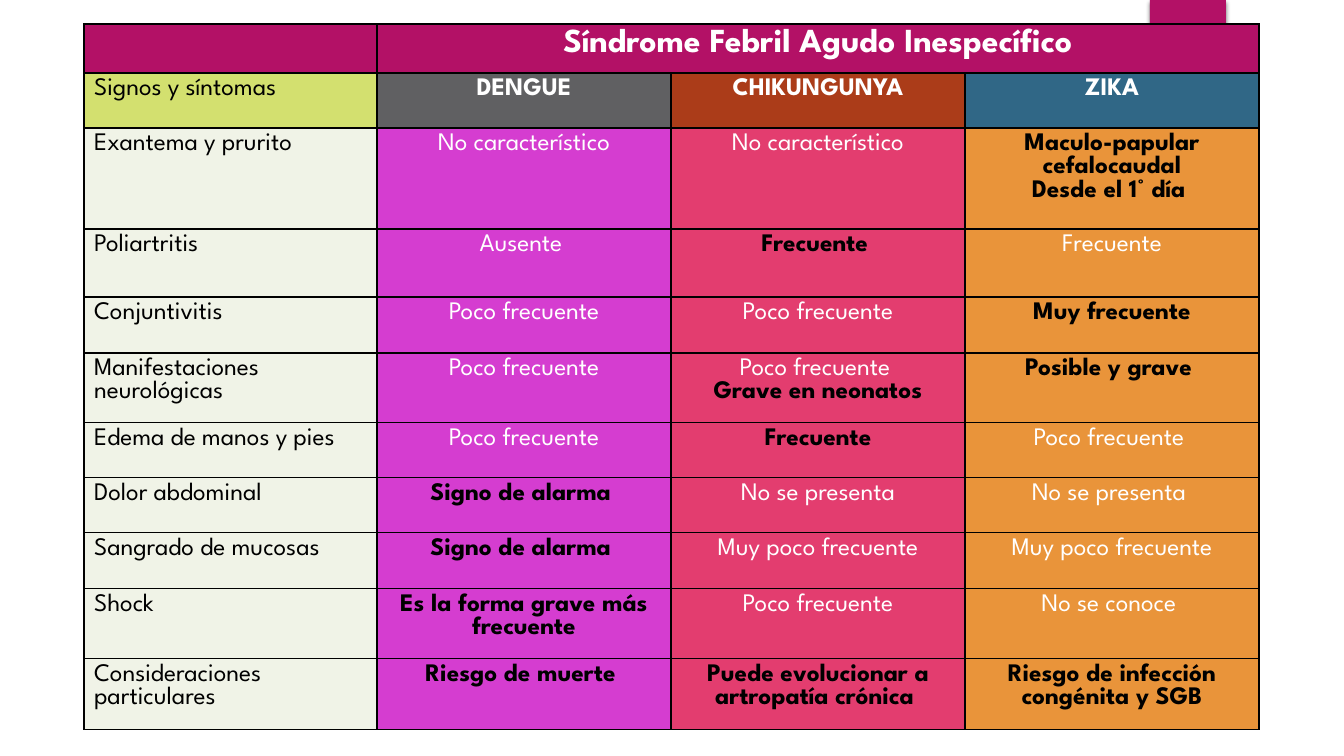
from lxml.etree import SubElement
from pptx import Presentation
from pptx.dml.color import RGBColor
from pptx.enum.shapes import MSO_SHAPE
from pptx.enum.text import PP_ALIGN
from pptx.oxml.ns import qn
from pptx.util import Pt

SCALE = 914400 / 100.8
FACE = "League Spartan"
PINK, WHITE, BLACK = "B31166", "FFFFFF", "000000"
TITLE = "Síndrome Febril Agudo Inespecífico"
HEADS = ["Signos y síntomas", "DENGUE", "CHIKUNGUNYA", "ZIKA"]
TOPS = ["D3E06F", "606062", "AB3C19", "306786"]
FILLS = ["F0F3E7", "D53DD0", "E33D6F", "E9943A"]
WIDTHS = [293, 294, 294, 294]
HEIGHTS = [49, 55, 101, 68, 56, 70, 55, 55, 56, 70, 71]
SIGNS = [
    ["Exantema y prurito", "No característico", "No característico",
     "*Maculo-papular cefalocaudal\n*Desde el 1° día "],
    ["Poliartritis", "Ausente ", "*Frecuente ", "Frecuente"],
    ["Conjuntivitis", "Poco frecuente", "Poco frecuente", "*Muy frecuente"],
    ["Manifestaciones neurológicas", "Poco frecuente",
     "Poco frecuente \n*Grave en neonatos", "*Posible y grave "],
    ["Edema de manos y pies", "Poco frecuente", "*Frecuente", "Poco frecuente "],
    ["Dolor abdominal", "*Signo de alarma ", "No se presenta", "No se presenta "],
    ["Sangrado de mucosas", "*Signo de alarma ", "Muy poco frecuente",
     "Muy poco frecuente"],
    ["Shock", "*Es la forma grave más frecuente", "Poco frecuente",
     "No se conoce "],
    ["Consideraciones particulares", "*Riesgo de muerte ",
     "*Puede evolucionar a artropatía crónica ",
     "*Riesgo de infección congénita y SGB"],
]


def px(num):
    return round(num * SCALE)


def paint(fill, tone):
    fill.solid()
    fill.fore_color.rgb = RGBColor.from_string(tone)


class Page:
    def __init__(self, deck):
        self.slide = deck.slides.add_slide(deck.slide_layouts[6])
        self.base = {"name": FACE, "size": Pt(18), "bold": False}

    def tab(self, left, top, wide, high, tone):
        box = self.slide.shapes.add_shape(
            MSO_SHAPE.RECTANGLE, px(left), px(top), px(wide), px(high))
        paint(box.fill, tone)
        box.line.fill.background()
        box.shadow.inherit = False
        glow = SubElement(box.element.spPr.find(qn("a:effectLst")),
                          qn("a:outerShdw"), blurRad=str(Pt(3)),
                          dist=str(Pt(2)), dir="5400000", rotWithShape="0")
        shade = SubElement(glow, qn("a:srgbClr"), val=BLACK)
        SubElement(shade, qn("a:alpha"), val="45000")

    def grid(self, left, top, wides, highs):
        frame = self.slide.shapes.add_table(
            len(highs), len(wides), px(left), px(top),
            px(sum(wides)), px(sum(highs)))
        table = frame.table
        table.first_row = table.horz_banding = False
        for col, wide in zip(table.columns, wides):
            col.width = px(wide)
        for row, high in zip(table.rows, highs):
            row.height = px(high)
        return table

    def cell(self, cell, tone, text="", side=PP_ALIGN.CENTER, ink=WHITE, **form):
        props = cell._tc.get_or_add_tcPr()
        for edge in ("L", "R", "T", "B"):
            line = SubElement(props, qn("a:ln" + edge), w=str(Pt(1)))
            fill = SubElement(line, qn("a:solidFill"))
            SubElement(fill, qn("a:srgbClr"), val=BLACK)
        paint(cell.fill, tone)
        if not text:
            return
        frame = cell.text_frame
        for num, part in enumerate(text.split("\n")):
            para = frame.add_paragraph() if num else frame.paragraphs[0]
            para.alignment = side
            run = para.add_run()
            strong = part.startswith("*")
            run.text = part.removeprefix("*")
            look = {**self.base, **form}
            if strong:
                look["bold"] = True
            for key, value in look.items():
                setattr(run.font, key, value)
            run.font.color.rgb = RGBColor.from_string(BLACK if strong else ink)


def main():
    deck = Presentation()
    deck.slide_width, deck.slide_height = px(1344), px(756)
    page = Page(deck)
    page.tab(1150, 0, 76, 126, PINK)
    table = page.grid(84, 24, WIDTHS, HEIGHTS)
    table.cell(0, 1).merge(table.cell(0, 3))
    for col, text in enumerate(["", TITLE, "", ""]):
        page.cell(table.cell(0, col), PINK, text, size=Pt(24), bold=True)
    for row, texts in enumerate([HEADS] + SIGNS, 1):
        tones = TOPS if row == 1 else FILLS
        for col, text in enumerate(texts):
            spot = table.cell(row, col)
            if col:
                page.cell(spot, tones[col], text, bold=row == 1)
            else:
                page.cell(spot, tones[col], text, PP_ALIGN.LEFT, BLACK)
    deck.save("out.pptx")


if __name__ == "__main__":
    main()
